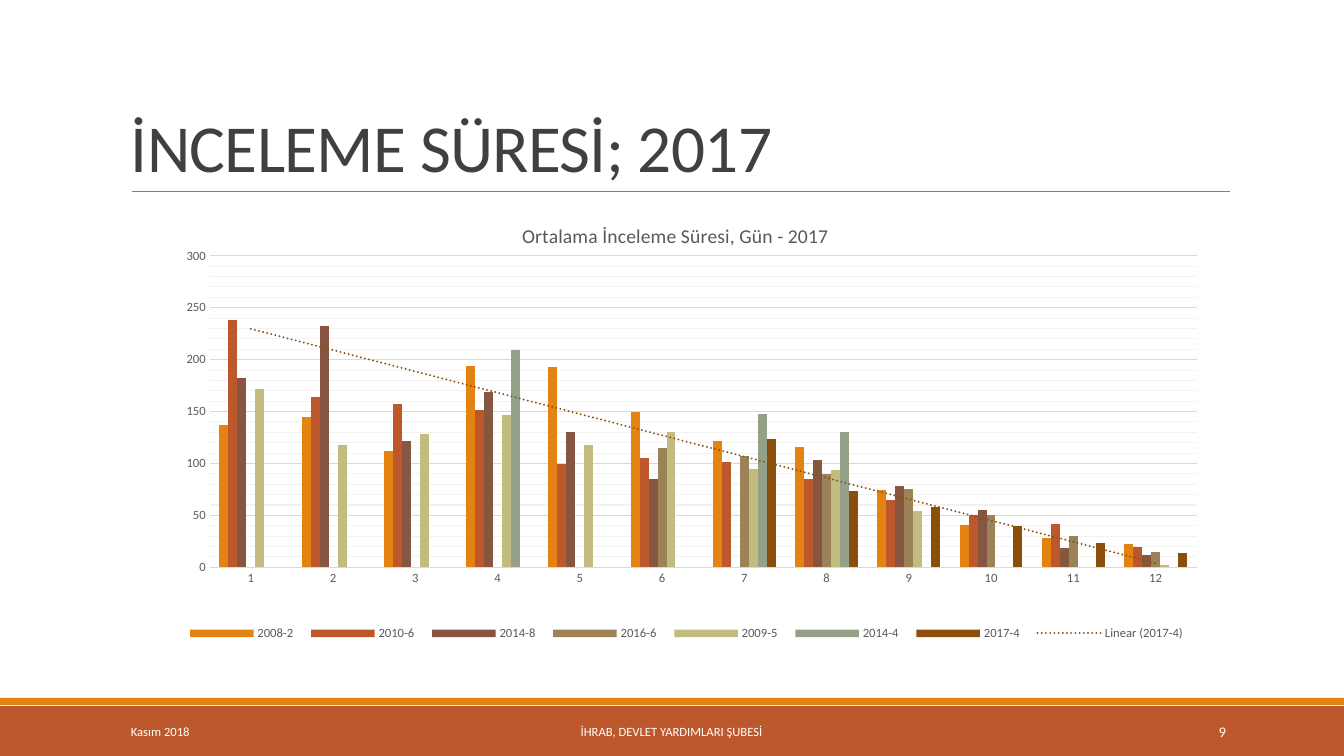
from pptx import Presentation
from pptx.chart.data import CategoryChartData
from pptx.dml.color import RGBColor
from pptx.enum.chart import XL_CHART_TYPE, XL_LEGEND_POSITION, XL_TICK_MARK
from pptx.enum.shapes import MSO_CONNECTOR, MSO_SHAPE
from pptx.enum.text import MSO_ANCHOR, PP_ALIGN
from pptx.oxml import parse_xml
from pptx.oxml.ns import nsdecls, qn
from pptx.util import Emu, Pt

WIDTH, HEIGHT = 1344, 756
MONTHS = [str(m) for m in range(1, 13)]
SERIES = [
    ("2008-2", "E48312", [137, 145, 112, 194, 193, 150, 122, 116, 74, 41, 28, 22]),
    ("2010-6", "BD582C", [238, 164, 157, 152, 99, 105, 101, 85, 65, 50, 42, 20]),
    ("2014-8", "865640", [182, 232, 122, 169, 130, 85, None, 103, 78, 55, 19, 12]),
    ("2016-6", "9B8357", [None] * 5 + [115, 107, 90, 75, 50, 30, 15]),
    ("2009-5", "C2BC80", [172, 118, 128, 147, 118, 130, 95, 94, 54, None, None, 2]),
    ("2014-4", "94A088", [None] * 3 + [209, None, None, 148, 130] + [None] * 4),
    ("2017-4", "894F0B", [None] * 6 + [124, 73, 58, 40, 23, 14]),
]


def px(n):
    return Emu(round(n * 12192000 / WIDTH))


def rgb(color):
    return RGBColor.from_string(color)


class Deck:
    font = "Calibri"
    muted = "595959"
    grid = "D9D9D9"

    def __init__(self):
        self.prs = Presentation()
        self.prs.slide_width, self.prs.slide_height = px(WIDTH), px(HEIGHT)
        self.s = self.prs.slides.add_slide(self.prs.slide_layouts[6])

    def style(self, font, size, color):
        font.name, font.size, font.bold = self.font, Pt(size), False
        font.color.rgb = rgb(color)

    def rect(self, x, y, w, h, color):
        sp = self.s.shapes.add_shape(MSO_SHAPE.RECTANGLE, px(x), px(y), px(w), px(h))
        sp.shadow.inherit = False
        sp.fill.solid()
        sp.fill.fore_color.rgb = rgb(color)
        sp.line.fill.background()

    def line(self, x1, y1, x2, y2, color, width):
        cn = self.s.shapes.add_connector(MSO_CONNECTOR.STRAIGHT, px(x1), px(y1), px(x2), px(y2))
        cn.line.color.rgb = rgb(color)
        cn.line.width = Pt(width)
        cn._element.spPr.append(parse_xml(f"<a:effectLst {nsdecls('a')}/>"))

    def text(self, x, y, w, h, text, size, color="FFFFFF", align=PP_ALIGN.LEFT,
             anchor=MSO_ANCHOR.MIDDLE, leading=None, spacing=0):
        tf = self.s.shapes.add_textbox(px(x), px(y), px(w), px(h)).text_frame
        tf.word_wrap = True
        tf.vertical_anchor = anchor
        p = tf.paragraphs[0]
        p.alignment = align
        p.line_spacing = leading
        self.style(p.font, size, color)
        r = p.add_run()
        r.text = text
        if spacing:
            r._r.get_or_add_rPr().set("spc", str(spacing))

    def layout(self, parent, index, x, y, w, h, inner=False):
        for old in parent.findall(qn("c:layout")):
            parent.remove(old)
        target = '<c:layoutTarget val="inner"/>' if inner else ""
        parent.insert(index, parse_xml(
            f"<c:layout {nsdecls('c')}><c:manualLayout>{target}"
            '<c:xMode val="edge"/><c:yMode val="edge"/>'
            f'<c:x val="{x}"/><c:y val="{y}"/><c:w val="{w}"/><c:h val="{h}"/>'
            "</c:manualLayout></c:layout>"))

    def trend(self, ser, color):
        ser._element.find(qn("c:cat")).addprevious(parse_xml(
            f"<c:trendline {nsdecls('c', 'a')}><c:spPr>"
            f'<a:ln w="{Pt(1.5)}" cap="rnd"><a:solidFill><a:srgbClr val="{color}"/></a:solidFill>'
            '<a:prstDash val="sysDot"/></a:ln></c:spPr><c:trendlineType val="linear"/>'
            '<c:dispRSqr val="0"/><c:dispEq val="0"/></c:trendline>'))

    def stroke(self, part, color):
        part.format.line.color.rgb = rgb(color)
        part.format.line.width = Pt(0.75)

    def minor_grid(self, axis, color):
        axis.has_minor_gridlines = True
        axis._element.find(qn("c:minorGridlines")).append(parse_xml(
            f'<c:spPr {nsdecls("c", "a")}><a:ln w="{Pt(0.75)}"><a:solidFill>'
            f'<a:srgbClr val="{color}"/></a:solidFill></a:ln></c:spPr>'))

    def chart(self, x, y, w, h, title, categories, series):
        data = CategoryChartData(number_format="#,##0")
        data.categories = categories
        for name, _, values in series:
            data.add_series(name, values)
        chart = self.s.shapes.add_chart(
            XL_CHART_TYPE.COLUMN_CLUSTERED, px(x), px(y), px(w), px(h), data).chart
        self.style(chart.font, 10, "000000")

        chart.has_title = True
        p = chart.chart_title.text_frame.paragraphs[0]
        p.text = title
        self.style(p.font, 14, self.muted)
        chart.chart_title.include_in_layout = False

        plot = chart.plots[0]
        plot.gap_width, plot.overlap, plot.vary_by_categories = 219, 0, False
        for ser, (_, color, _) in zip(plot.series, series):
            ser.format.fill.solid()
            ser.format.fill.fore_color.rgb = rgb(color)
            ser.invert_if_negative = False
        self.trend(ser, color)

        for axis in (chart.category_axis, chart.value_axis):
            axis.major_tick_mark = axis.minor_tick_mark = XL_TICK_MARK.NONE
            self.style(axis.tick_labels.font, 9, self.muted)
        self.stroke(chart.category_axis, self.grid)
        axis.format.line.fill.background()
        axis.minimum_scale, axis.maximum_scale = 0, 300
        axis.major_unit, axis.minor_unit = 50, 10
        self.stroke(axis.major_gridlines, self.grid)
        self.minor_grid(axis, "F2F2F2")

        chart.has_legend = True
        legend = chart.legend
        legend.position = XL_LEGEND_POSITION.BOTTOM
        legend.include_in_layout = False
        self.style(legend.font, 9, self.muted)
        self.layout(legend._element, 1, 0.05, 0.88, 0.92, 0.06)
        plot_area = chart._chartSpace.chart.plotArea
        self.layout(plot_area, 0, 0.08, 0.11, 0.89, 0.66, inner=True)


def main():
    d = Deck()
    d.rect(0, 706, WIDTH, 50, "BD582C")
    d.rect(0, 698, WIDTH, 7, "E48312")
    d.line(132, 191, 1230, 191, "808080", 0.5)
    d.text(121, 31, 1109, 160, "İNCELEME SÜRESİ; 2017", 48, "404040",
           anchor=MSO_ANCHOR.BOTTOM, leading=0.85, spacing=-50)
    d.text(121, 712, 272, 40, "Kasım 2018", 9)
    d.text(406, 712, 531, 40, "İHRAB, DEVLET YARDIMLARI ŞUBESİ", 9, align=PP_ALIGN.CENTER)
    d.text(1092, 712, 144, 40, "9", 10.5, align=PP_ALIGN.RIGHT)
    d.chart(121, 204, 1109, 472, "Ortalama İnceleme Süresi, Gün - 2017", MONTHS, SERIES)
    d.prs.save("out.pptx")


if __name__ == "__main__":
    main()
